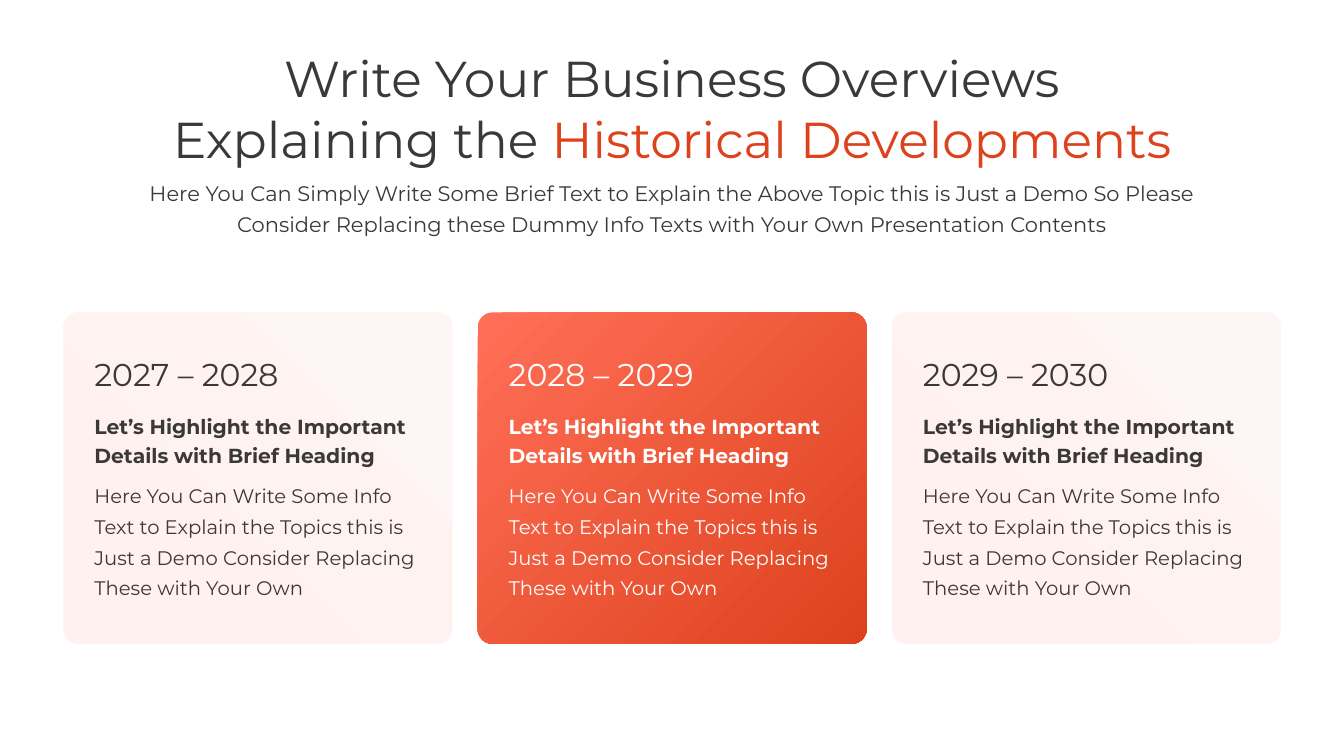
import pptx
import pptx.dml.color
import pptx.enum.shapes
import pptx.enum.text
import pptx.oxml
import pptx.oxml.ns
import pptx.util

Pt = pptx.util.Pt
CENTER = pptx.enum.text.PP_ALIGN.CENTER
LEFT = pptx.enum.text.PP_ALIGN.LEFT
INK, WHITE, ACCENT, CORAL = "3B3838", "FFFFFF", "DD421D", "FF6F57"
PALE_STOPS = [(0.12, "FFF1EF"), (1, "FEF6F4")]
BRIGHT_STOPS = [(0, ACCENT), (1, CORAL)]

TITLE = {"size": Pt(36)}
SUBTITLE = {"size": Pt(15)}
YEARS = {"size": Pt(22.5)}
HEADING = {"size": Pt(14.5), "bold": True}
BODY = {"size": Pt(14)}

HEADING_TEXT = "Let’s Highlight the Important\nDetails with Brief Heading"
BODY_LINES = [
    "Here You Can Write Some Info",
    "Text to Explain the Topics this is",
    "Just a Demo Consider Replacing",
    "These with Your Own",
]
CARDS = [
    ("2027 – 2028", False),
    ("2028 – 2029", True),
    ("2029 – 2030", False),
]


def rgb(value):
    return pptx.dml.color.RGBColor.from_string(value)


def style_run(run, font_format, color):
    for name, value in {"name": "Montserrat", **font_format}.items():
        setattr(run.font, name, value)
    run.font.color.rgb = rgb(color)


def add_text(slide, box, lines, font_format, color=INK, align=LEFT, spacing=None):
    frame = slide.shapes.add_textbox(*map(Pt, box)).text_frame
    frame.word_wrap = False
    frame.auto_size = pptx.enum.text.MSO_AUTO_SIZE.SHAPE_TO_FIT_TEXT
    for index, line in enumerate(lines):
        paragraph = frame.add_paragraph() if index else frame.paragraphs[0]
        paragraph.text = line
        paragraph.alignment = align
        if spacing:
            paragraph.line_spacing = Pt(spacing)
        for run in paragraph.runs:
            style_run(run, font_format, color)
    return frame


def fill_gradient(fill, stops):
    fill.gradient()
    fill.gradient_angle = 45
    for stop, (position, color) in zip(fill.gradient_stops, stops):
        stop.position = position
        stop.color.rgb = rgb(color)


def radiate_from_corner(panel):
    linear = panel._element.spPr.find(".//" + pptx.oxml.ns.qn("a:lin"))
    radial = pptx.oxml.parse_xml(
        f'<a:path {pptx.oxml.ns.nsdecls("a")} path="circle">'
        '<a:fillToRect l="100000" t="100000"/></a:path>'
    )
    linear.getparent().replace(linear, radial)


def add_header(slide, left, top, width):
    title = add_text(
        slide, (left, top, width, 94.3),
        ["Write Your Business Overviews", "Explaining the "],
        TITLE, align=CENTER,
    )
    highlight = title.paragraphs[1].add_run()
    highlight.text = "Historical Developments"
    style_run(highlight, TITLE, ACCENT)
    add_text(
        slide, (left + 9.4, top + 91.5, width - 18.8, 49.7),
        [
            "Here You Can Simply Write Some Brief Text to Explain the Above Topic this is Just a Demo So Please",
            "Consider Replacing these Dummy Info Texts with Your Own Presentation Contents",
        ],
        SUBTITLE, align=CENTER, spacing=22,
    )


def add_card(slide, left, top, width, height, years, highlighted):
    panel = slide.shapes.add_shape(
        pptx.enum.shapes.MSO_SHAPE.ROUNDED_RECTANGLE,
        *map(Pt, (left, top, width, height)),
    )
    panel.adjustments[0] = 0.046
    panel.shadow.inherit = False
    panel.line.fill.background()
    fill_gradient(panel.fill, BRIGHT_STOPS if highlighted else PALE_STOPS)
    if highlighted:
        radiate_from_corner(panel)

    color = WHITE if highlighted else INK
    text_left = left + 15.1
    text_width = width - 31
    add_text(slide, (text_left, top + 26.6, 154.4, 34.6), [years], YEARS, color)
    add_text(slide, (text_left, top + 65.5, text_width, 48.2),
             [HEADING_TEXT], HEADING, color, spacing=21)
    add_text(slide, (text_left, top + 113.8, text_width, 94.3),
             BODY_LINES, BODY, color, spacing=22)


def add_cards(slide, left, top, width, height, gap):
    card_width = (width - gap * (len(CARDS) - 1)) / len(CARDS)
    for index, (years, highlighted) in enumerate(CARDS):
        card_left = left + index * (card_width + gap)
        add_card(slide, card_left, top, card_width, height, years, highlighted)


def main():
    deck = pptx.Presentation()
    deck.slide_width, deck.slide_height = Pt(960), Pt(540)
    slide = deck.slides.add_slide(deck.slide_layouts[6])
    add_header(slide, 79.7, 30.2, 800.6)
    add_cards(slide, 45.2, 223.1, 869.8, 236.9, 18)
    deck.save("out.pptx")


if __name__ == "__main__":
    main()
